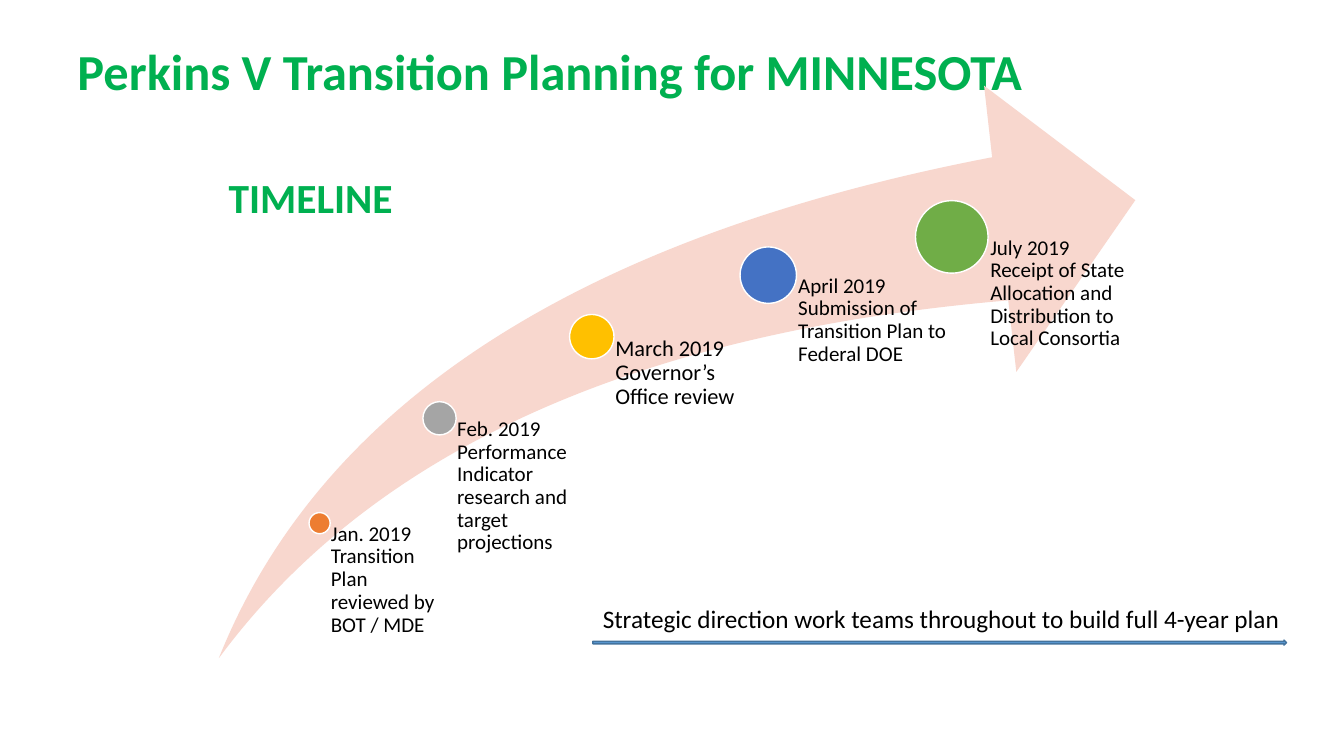
from dataclasses import dataclass
from typing import NamedTuple

from pptx import Presentation
from pptx.dml.color import RGBColor
from pptx.enum.shapes import MSO_SHAPE
from pptx.util import Inches, Pt


class Box(NamedTuple):
    """Area of the slide in inches."""
    left: float
    top: float
    width: float
    height: float

    def emu(self):
        """Return the four lengths for python-pptx."""
        return [Inches(v) for v in self]


class Milestone(NamedTuple):
    """Dot centre relative to the swoosh box, dot size and label."""
    x: float
    y: float
    diameter: float
    label_width: float
    color: str
    size: float
    text: str


@dataclass(frozen=True)
class Theme:
    """Colours and type sizes of the slide."""
    font: str = "Calibri"
    heading: str = "00B050"
    body: str = "000000"
    swoosh: str = "F8D7CE"
    dot_line: str = "FFFFFF"
    bar: str = "5B9BD5"
    bar_line: str = "43739E"
    title_size: float = 36
    subtitle_size: float = 29.6
    label_size: float = 15
    large_label_size: float = 16
    note_size: float = 18


THEME = Theme()
LABEL_GAP = 1.06
MILESTONES = [
    Milestone(1.0, 4.34, 0.21, 1.19, "ED7D31", THEME.label_size,
              "Jan. 2019 Transition Plan reviewed by BOT / MDE"),
    Milestone(2.19, 3.3, 0.33, 1.51, "A5A5A5", THEME.label_size,
              "Feb. 2019 Performance Indicator research and target projections"),
    Milestone(3.7, 2.49, 0.44, 1.75, "FFC000", THEME.large_label_size,
              "March 2019 Governor’s Office review"),
    Milestone(5.45, 1.88, 0.56, 1.82, "4472C4", THEME.label_size,
              "April 2019 Submission of Transition Plan to Federal DOE"),
    Milestone(7.27, 1.5, 0.72, 1.82, "70AD47", THEME.label_size,
              "July 2019 Receipt of State Allocation and Distribution to Local Consortia"),
]


def add_text(s, box, text, size, color=THEME.body, bold=False, spacing=1.0, before=0, insets=None):
    """Add a wrapped text box holding one run."""
    tf = s.shapes.add_textbox(*box.emu()).text_frame
    tf.word_wrap = True
    if insets:
        tf.margin_left, tf.margin_top, tf.margin_right, tf.margin_bottom = map(Inches, insets)
    p = tf.paragraphs[0]
    p.line_spacing = spacing
    p.space_before = Pt(before)
    r = p.add_run()
    r.text = text
    r.font.name = THEME.font
    r.font.size = Pt(size)
    r.font.bold = bold
    r.font.color.rgb = RGBColor.from_string(color)


def add_solid(s, kind, box, fill, line=None):
    """Add a flat preset shape with an optional one-point outline."""
    sp = s.shapes.add_shape(kind, *box.emu())
    sp.shadow.inherit = False
    sp.fill.solid()
    sp.fill.fore_color.rgb = RGBColor.from_string(fill)
    if line:
        sp.line.color.rgb = RGBColor.from_string(line)
        sp.line.width = Pt(1)
    else:
        sp.line.fill.background()
    return sp


def add_headings(s, box):
    """Place the title and the subtitle below it."""
    subtitle = Box(box.left + 1.5, box.top + 1.33, 2.06, 0.54)
    add_text(s, subtitle, "TIMELINE", THEME.subtitle_size, THEME.heading, True, 0.8, 10)
    add_text(s, box, "Perkins V Transition Planning for MINNESOTA",
             THEME.title_size, THEME.heading, True, 0.9, 10)


def add_timeline(s, box):
    """Draw the swoosh with a dot and a label for each milestone."""
    swoosh = add_solid(s, MSO_SHAPE.SWOOSH_ARROW, box, THEME.swoosh)
    swoosh.adjustments[0] = swoosh.adjustments[1] = 0.25
    for m in MILESTONES:
        x, y, radius = box.left + m.x, box.top + m.y, m.diameter / 2
        dot = Box(x - radius, y - radius, m.diameter, m.diameter)
        add_solid(s, MSO_SHAPE.OVAL, dot, m.color, THEME.dot_line)
        label = Box(x, y, m.label_width, box.height - m.y)
        add_text(s, label, m.text, m.size, spacing=0.9, insets=(radius * LABEL_GAP, 0, 0, 0))


def add_strategy_note(s, box):
    """Place the closing note above its long thin arrow."""
    add_text(s, box, "Strategic direction work teams throughout to build full 4-year plan",
             THEME.note_size)
    bar = Box(box.left, box.top + 0.41, box.width - 0.24, 0.05)
    add_solid(s, MSO_SHAPE.RIGHT_ARROW, bar, THEME.bar, THEME.bar_line)


def main():
    """Build and save the slide."""
    prs = Presentation()
    prs.slide_width, prs.slide_height = Inches(13.33), Inches(7.5)
    s = prs.slides.add_slide(prs.slide_layouts[6])
    add_headings(s, Box(0.67, 0.42, 11.89, 1.17))
    add_timeline(s, Box(2.17, 0.85, 9.09, 5.68))
    add_strategy_note(s, Box(5.88, 5.94, 7.12, 0.4))
    prs.save("out.pptx")


if __name__ == "__main__":
    main()
